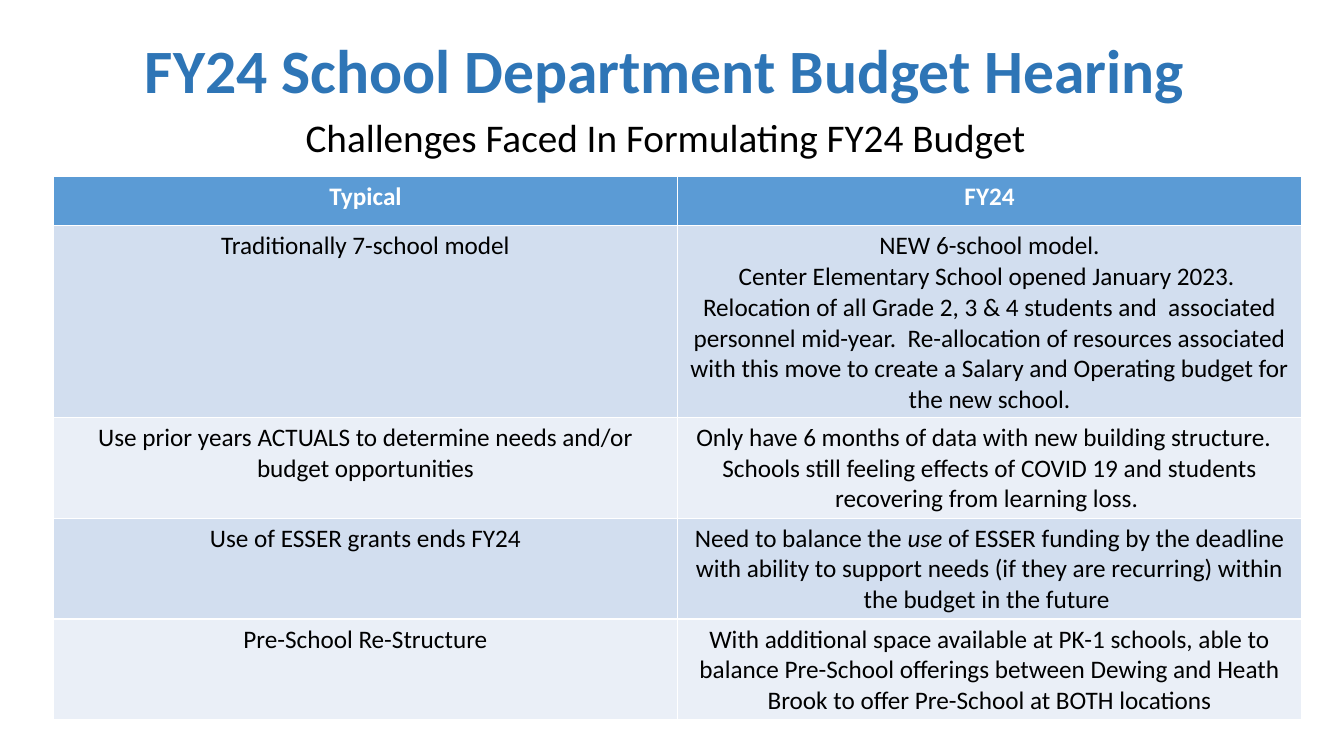
"""Build the FY24 school budget slide comparing typical practice with FY24."""
from dataclasses import dataclass

from pptx import Presentation
from pptx.dml.color import RGBColor as RGB
from pptx.enum.text import MSO_ANCHOR as Anchor, PP_ALIGN as Align
from pptx.util import Inches, Pt


@dataclass(frozen=True)
class Theme:
    font: str = "Calibri"
    title: str = "2E75B6"
    text: str = "000000"
    head_text: str = "FFFFFF"
    head_fill: str = "5B9BD5"
    bands: tuple = ("D2DEEF", "EAEFF7")
    title_size: int = 44
    subtitle_size: int = 28
    table_size: int = 18


theme = Theme()


def write(tf, text, size, color, bold=False, spacing=None, before=None):
    """Fill a text frame: newlines split paragraphs, asterisks mark italics."""
    tf.word_wrap = True
    for i, line in enumerate(text.split("\n")):
        p = tf.add_paragraph() if i else tf.paragraphs[0]
        p.alignment = Align.CENTER
        p.line_spacing = spacing
        p.space_before = before
        for j, part in enumerate(line.split("*")):
            r = p.add_run()
            r.text = part
            r.font.name = theme.font
            r.font.size = Pt(size)
            r.font.bold = bold
            r.font.italic = j % 2 == 1
            r.font.color.rgb = RGB.from_string(color)


prs = Presentation()
prs.slide_width, prs.slide_height = Inches(13.33), Inches(7.5)
s = prs.slides.add_slide(prs.slide_layouts[6])

title = s.shapes.add_textbox(Inches(0.85), Inches(0), Inches(11.5), Inches(1.45))
title.text_frame.vertical_anchor = Anchor.MIDDLE
write(title.text_frame, "FY24 School Department Budget Hearing",
      theme.title_size, theme.title, bold=True, spacing=0.9)

subtitle = s.shapes.add_textbox(Inches(0.53), Inches(1.13), Inches(12.14), Inches(4.76))
write(subtitle.text_frame, "Challenges Faced In Formulating FY24 Budget",
      theme.subtitle_size, theme.text, spacing=0.9, before=Pt(10))

rows = [
    ("Typical", "FY24"),
    ("Traditionally 7-school model",
     "NEW 6-school model.\n"
     "Center Elementary School opened January 2023.  Relocation of all Grade 2, 3 & 4 "
     "students and  associated personnel mid-year.  Re-allocation of resources associated "
     "with this move to create a Salary and Operating budget for the new school."),
    ("Use prior years ACTUALS to determine needs and/or budget opportunities",
     "Only have 6 months of data with new building structure.  \n"
     "Schools still feeling effects of COVID 19 and students recovering from learning loss. "),
    ("Use of ESSER grants ends FY24",
     "Need to balance the *use* of ESSER funding by the deadline with ability to support "
     "needs (if they are recurring) within the budget in the future "),
    ("Pre-School Re-Structure",
     "With additional space available at PK-1 schools, able to balance Pre-School offerings "
     "between Dewing and Heath Brook to offer Pre-School at BOTH locations"),
]
frame = s.shapes.add_table(len(rows), 2, Inches(0.53), Inches(1.75), Inches(12.38), Inches(5.39))
table = frame.table
for i, texts in enumerate(rows):
    table.rows[i].height = Inches(0.49)
    head = i == 0
    fill = theme.head_fill if head else theme.bands[(i - 1) % 2]
    color = theme.head_text if head else theme.text
    for j, text in enumerate(texts):
        cell = table.cell(i, j)
        cell.fill.solid()
        cell.fill.fore_color.rgb = RGB.from_string(fill)
        write(cell.text_frame, text, theme.table_size, color, bold=head)
frame.height = Inches(5.39)

prs.save("out.pptx")
